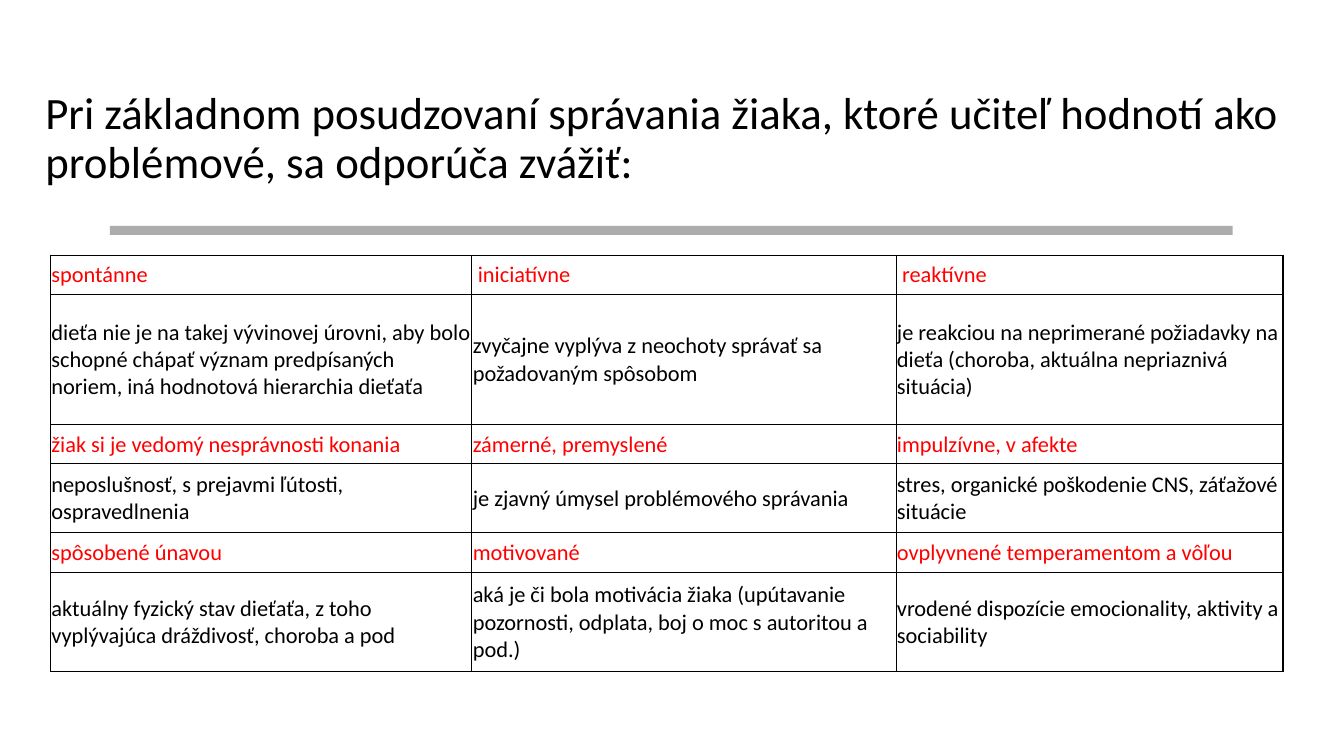
"""Build a slide with a table of kinds of problem behaviour of a pupil."""
from lxml import etree
from pptx import Presentation
from pptx.dml.color import RGBColor
from pptx.enum.shapes import MSO_SHAPE
from pptx.enum.text import MSO_ANCHOR, MSO_AUTO_SIZE, PP_ALIGN
from pptx.oxml.ns import qn
from pptx.util import Pt

MIDDLE = MSO_ANCHOR.MIDDLE
LEFT = PP_ALIGN.LEFT
NO_AUTOFIT = MSO_AUTO_SIZE.NONE
RECTANGLE = MSO_SHAPE.RECTANGLE

TITLE_ONLY = 5
FONT = "Calibri"
BLACK, RED, GREY = "000000", "FF0000", "808080"
COLUMN_WIDTHS = [301, 303, 276.5]
ROW_HEIGHTS = [28, 92.9, 28, 49.5, 28, 71.3]
ROWS = [
    ["spontánne", " iniciatívne", " reaktívne"],
    ["dieťa nie je na takej vývinovej úrovni, aby bolo schopné chápať význam "
     "predpísaných noriem, iná hodnotová hierarchia dieťaťa",
     "zvyčajne vyplýva z neochoty správať sa požadovaným spôsobom",
     "je reakciou na neprimerané požiadavky na dieťa (choroba, aktuálna nepriaznivá situácia)"],
    ["žiak si je vedomý nesprávnosti konania", "zámerné, premyslené", "impulzívne, v afekte"],
    ["neposlušnosť, s prejavmi ľútosti, ospravedlnenia",
     "je zjavný úmysel problémového správania",
     "stres, organické poškodenie CNS, záťažové situácie"],
    ["spôsobené únavou", "motivované", "ovplyvnené temperamentom a vôľou"],
    ["aktuálny fyzický stav dieťaťa, z toho vyplývajúca dráždivosť, choroba a pod",
     "aká je či bola motivácia žiaka (upútavanie pozornosti, odplata, boj o moc "
     "s autoritou a pod.)",
     "vrodené dispozície emocionality, aktivity a sociability"],
]


def format_text(paragraph, size, color):
    paragraph.alignment = LEFT
    for run in paragraph.runs:
        run.font.name = FONT
        run.font.size = Pt(size)
        run.font.color.rgb = RGBColor.from_string(color)


def add_border(cell, side, width):
    properties = cell._tc.get_or_add_tcPr()
    line = etree.SubElement(properties, qn(f"a:ln{side}"), w=str(Pt(width)))
    fill = etree.SubElement(line, qn("a:solidFill"))
    etree.SubElement(fill, qn("a:srgbClr"), val=BLACK)


presentation = Presentation()
presentation.slide_width = Pt(960)
presentation.slide_height = Pt(540)
slide = presentation.slides.add_slide(presentation.slide_layouts[TITLE_ONLY])

title = slide.shapes.title
title.left, title.top, title.width, title.height = Pt(25.2), Pt(47.5), Pt(905.8), Pt(104.4)
title.text_frame.text = ("Pri základnom posudzovaní správania žiaka, ktoré učiteľ hodnotí ako "
                         "problémové, sa odporúča zvážiť:")
title.text_frame.auto_size = NO_AUTOFIT
title.text_frame.vertical_anchor = MIDDLE
title.text_frame.paragraphs[0].line_spacing = 0.9
format_text(title.text_frame.paragraphs[0], 32, BLACK)

divider = slide.shapes.add_shape(RECTANGLE, Pt(78.5), Pt(161.3), Pt(802), Pt(6.5))
divider.shadow.inherit = False
divider.fill.solid()
divider.fill.fore_color.rgb = RGBColor.from_string(GREY)
divider.line.fill.background()
divider_color = divider._element.spPr.find(qn("a:solidFill"))[0]
etree.SubElement(divider_color, qn("a:alpha"), val="65000")

table = slide.shapes.add_table(len(ROWS), len(COLUMN_WIDTHS), Pt(36), Pt(182.2),
                               Pt(sum(COLUMN_WIDTHS)), Pt(sum(ROW_HEIGHTS))).table
table.first_row = False
table.horz_banding = False
for column, width in zip(table.columns, COLUMN_WIDTHS):
    column.width = Pt(width)

last_row, last_column = len(ROWS) - 1, len(COLUMN_WIDTHS) - 1
for row_index, texts in enumerate(ROWS):
    table.rows[row_index].height = Pt(ROW_HEIGHTS[row_index])
    for column_index, text in enumerate(texts):
        cell = table.cell(row_index, column_index)
        cell.text_frame.text = text
        cell.vertical_anchor = MIDDLE
        cell.margin_left = cell.margin_right = cell.margin_top = Pt(0.75)
        cell.margin_bottom = Pt(0)
        format_text(cell.text_frame.paragraphs[0], 16, BLACK if row_index % 2 else RED)
        outer_sides = {"L": column_index == 0, "R": column_index == last_column,
                       "T": row_index == 0, "B": row_index == last_row}
        for side, is_outer in outer_sides.items():
            add_border(cell, side, 1 if is_outer else 0.5)
        cell.fill.background()

presentation.save("out.pptx")
